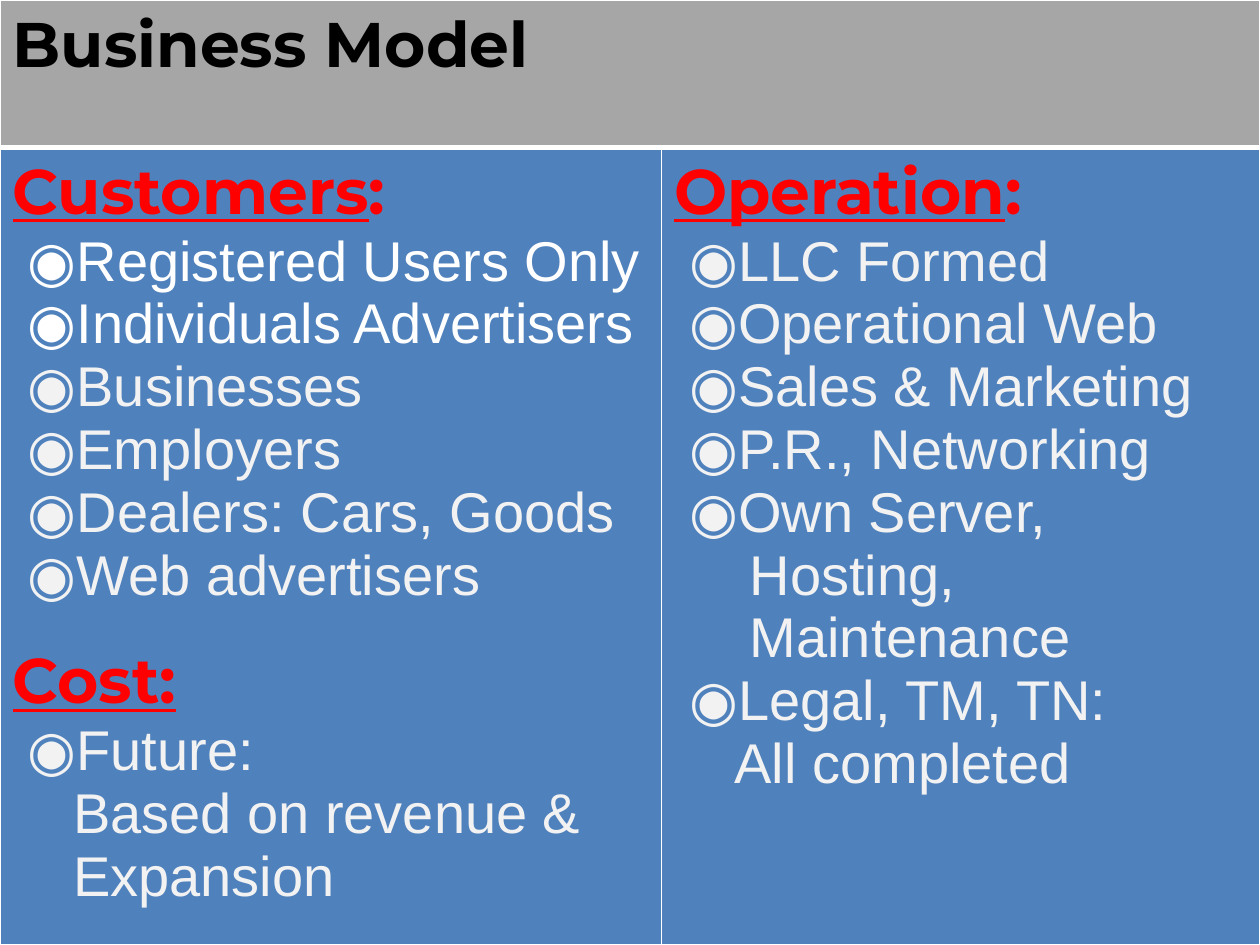
from pptx import Presentation
from pptx import util as u
from pptx.dml.color import RGBColor
from pptx.oxml import parse_xml
from pptx.oxml.ns import nsdecls

THEME = {
    "band": "A6A6A6", "body": "4F81BD", "rule": "FFFFFF",
    "title": "000000", "head": "FF0000", "white": "FFFFFF", "pale": "F2F2F2",
    "head_font": "Montserrat", "text_font": "Arial",
    "head_size": 36, "text_size": 32, "gap": 20.5,
}

# Content: (underlined heading, plain tail, items)
# Item: (text, indent in word spaces, colour)
TITLE = "Business Model"
LEFT = [
    ("Customers", ":", [
        ("◉Registered Users Only", 1, "white"),
        ("◉Individuals Advertisers", 1, "white"),
        ("◉Businesses", 1, "pale"),
        ("◉Employers", 1, "pale"),
        ("◉Dealers: Cars, Goods", 1, "pale"),
        ("◉Web advertisers", 1, "pale"),
    ]),
    ("Cost:", "", [
        ("◉Future:", 1, "pale"),
        ("Based on revenue &", 4, "pale"),
        ("Expansion", 4, "pale"),
    ]),
]
RIGHT = [
    ("Operation", ":", [
        ("◉LLC Formed", 1, "pale"),
        ("◉Operational Web", 1, "pale"),
        ("◉Sales & Marketing", 1, "pale"),
        ("◉P.R., Networking", 1, "pale"),
        ("◉Own Server,", 1, "pale"),
        ("Hosting,", 5, "pale"),
        ("Maintenance", 5, "pale"),
        ("◉Legal, TM, TN:", 1, "pale"),
        ("All completed", 4, "pale"),
    ]),
]
COLS = (5.25, 4.75)
ROWS = (1.17, 6.33)
STEP = 0.12  # one word space at the text size


def add_run(para, words, kind, color, line=False):
    run = para.add_run()
    run.text = words
    font = run.font
    font.name = THEME[kind + "_font"]
    font.size = u.Pt(THEME[kind + "_size"])
    font.bold = kind == "head"
    font.underline = line
    font.color.rgb = RGBColor.from_string(THEME[color])


def style(cell, fill, base=1):
    props = cell._tc.get_or_add_tcPr()
    for side, width in (("L", 1), ("R", 1), ("T", 1), ("B", base)):
        props.append(parse_xml(
            f'<a:ln{side} {nsdecls("a")} w="{u.Pt(width)}"><a:solidFill>'
            f'<a:srgbClr val="{THEME["rule"]}"/></a:solidFill></a:ln{side}>'))
    cell.fill.solid()
    cell.fill.fore_color.rgb = RGBColor.from_string(THEME[fill])


def fill_cell(cell, groups):
    frame = cell.text_frame
    for num, (head, tail, items) in enumerate(groups):
        para = frame.add_paragraph() if num else frame.paragraphs[0]
        if num:
            para.space_before = u.Pt(THEME["gap"])
        add_run(para, head, "head", "head", True)
        if tail:
            add_run(para, tail, "head", "head")
        for words, depth, color in items:
            para = frame.add_paragraph()
            indent = u.Inches(depth * STEP)
            para._p.get_or_add_pPr().set("marL", str(indent))
            add_run(para, words, "text", color)


def main():
    deck = Presentation()
    deck.slide_width, deck.slide_height = u.Inches(10), u.Inches(7.5)
    slide = deck.slides.add_slide(deck.slide_layouts[6])

    # Table grid
    table = slide.shapes.add_table(
        2, 2, 0, 0, u.Inches(sum(COLS)), u.Inches(sum(ROWS))).table
    table.horz_banding = False
    for col, width in zip(table.columns, COLS):
        col.width = u.Inches(width)
    for row, height in zip(table.rows, ROWS):
        row.height = u.Inches(height)

    # Title band
    band = table.cell(0, 0)
    for num in range(2):
        style(table.cell(0, num), "band", 3)
    band.merge(table.cell(0, 1))
    add_run(band.text_frame.paragraphs[0], TITLE, "head", "title")

    # Two columns of lists
    for num, groups in enumerate((LEFT, RIGHT)):
        cell = table.cell(1, num)
        style(cell, "body")
        fill_cell(cell, groups)

    deck.save("out.pptx")


if __name__ == "__main__":
    main()
